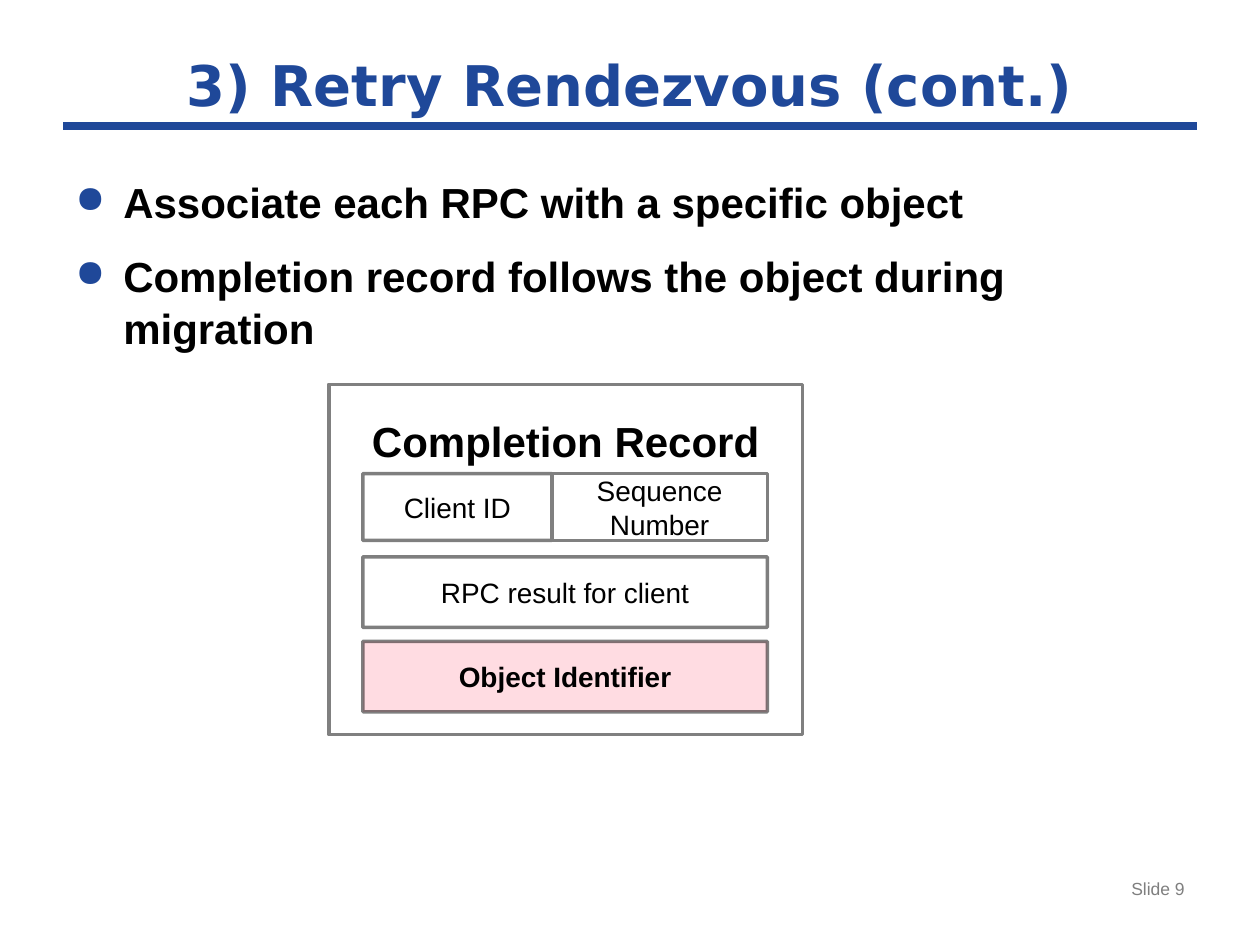
"""Build the "Retry Rendezvous (cont.)" slide with its completion record diagram."""
from dataclasses import dataclass

from lxml import etree
from pptx import Presentation, util as u
from pptx.dml.color import RGBColor
from pptx.enum import shapes, text
from pptx.oxml.ns import qn

PX = 9144
COLORS = {
    "blue": "1F4899",
    "black": "000000",
    "gray": "808080",
    "footer": "7F7F7F",
    "white": "FFFFFF",
    "pink": "FFBAC7",
}
ALIGN = text.PP_ALIGN
ANCHOR = text.MSO_ANCHOR


@dataclass(frozen=True)
class Style:
    size: int
    color: str = "black"
    bold: bool = False
    font: str = "Arial"
    align: ALIGN = ALIGN.CENTER
    anchor: ANCHOR = ANCHOR.MIDDLE
    spacing: float = 1.0


@dataclass(frozen=True)
class Box:
    label: str
    x: int
    y: int
    w: int
    h: int
    style: Style
    fill: str = "white"
    fill_alpha: int = 100
    line: str = "gray"
    line_alpha: int = 100


TITLE = Style(32, "blue", True, "DejaVu Sans")
BODY = Style(24, bold=True, align=ALIGN.LEFT, anchor=ANCHOR.TOP, spacing=1.05)
FOOTER = Style(10, "footer", align=ALIGN.RIGHT, anchor=ANCHOR.TOP)
RECORD = Style(24, bold=True, anchor=ANCHOR.TOP, spacing=1.5)
FIELD = Style(16)
KEY_FIELD = Style(16, bold=True)

BULLETS = [
    "Associate each RPC with a specific object",
    "Completion record follows the object during migration",
]
LEFT, ID_W, SEQ_W = 288, 150, 171
FULL_W = ID_W + SEQ_W
BOXES = [
    Box("Completion Record", 261, 305, 376, 278, RECORD),
    Box("Client ID", LEFT, 376, ID_W, 53, FIELD, line="black", line_alpha=50),
    Box("Sequence Number", LEFT + ID_W, 376, SEQ_W, 53, FIELD),
    Box("RPC result for client", LEFT, 442, FULL_W, 56, FIELD, "white", 50, "black", 50),
    Box("Object Identifier", LEFT, 509, FULL_W, 56, KEY_FIELD, "pink", 50, "black", 50),
]


def px(*values: int) -> list[int]:
    """Turn px lengths into EMU."""
    return [value * PX for value in values]


def rgb(name: str) -> RGBColor:
    """Look up a named colour."""
    return RGBColor.from_string(COLORS[name])


def paint(fill, color: str, alpha: int = 100) -> None:
    """Apply a solid fill, with opacity in percent."""
    fill.solid()
    fill.fore_color.rgb = rgb(color)
    if alpha < 100:
        clr = fill._xPr.find(qn("a:solidFill"))[0]
        etree.SubElement(clr, qn("a:alpha")).set("val", str(alpha * 1000))


def write(tf, lines: list[str], style: Style) -> None:
    """Fill a text frame with one paragraph per line."""
    tf.word_wrap = True
    tf.vertical_anchor = style.anchor
    tf.text = "\n".join(lines)
    for p in tf.paragraphs:
        p.alignment = style.align
        p.line_spacing = style.spacing
        p.font.name = style.font
        p.font.size = u.Pt(style.size)
        p.font.bold = style.bold
        p.font.color.rgb = rgb(style.color)


def add_text(s, lines: list[str], x: int, y: int, w: int, h: int, style: Style):
    """Add a text box and return its text frame."""
    tf = s.shapes.add_textbox(*px(x, y, w, h)).text_frame
    write(tf, lines, style)
    return tf


def add_bullet(p) -> None:
    """Give a paragraph a hanging blue bullet."""
    p.space_before = u.Pt(12)
    pPr = p._p.get_or_add_pPr()
    indent = 38 * PX
    pPr.set("marL", str(indent))
    pPr.set("indent", str(-indent))
    marks = [etree.Element(qn(f"a:{tag}")) for tag in ("buClr", "buSzPct", "buChar")]
    etree.SubElement(marks[0], qn("a:srgbClr")).set("val", COLORS["blue"])
    marks[1].set("val", "90000")
    marks[2].set("char", "●")
    at = pPr.index(pPr.find(qn("a:defRPr")))
    pPr[at:at] = marks


def add_box(s, box: Box) -> None:
    """Draw one labelled rectangle."""
    sp = s.shapes.add_shape(
        shapes.MSO_SHAPE.RECTANGLE, *px(box.x, box.y, box.w, box.h))
    sp.shadow.inherit = False
    paint(sp.fill, box.fill, box.fill_alpha)
    sp.line.width = u.Pt(2)
    paint(sp.line.fill, box.line, box.line_alpha)
    write(sp.text_frame, [box.label], box.style)


def add_rule(s, x1: int, x2: int, y: int) -> None:
    """Draw the horizontal rule under the title."""
    line = s.shapes.add_connector(shapes.MSO_CONNECTOR.STRAIGHT, *px(x1, y, x2, y))
    line.line.width = u.Pt(4.5)
    line.line.color.rgb = rgb("blue")
    etree.SubElement(line._element.spPr, qn("a:effectLst"))


def main() -> None:
    """Build and save the slide."""
    prs = Presentation()
    prs.slide_width, prs.slide_height = px(1000, 750)
    s = prs.slides.add_slide(prs.slide_layouts[6])
    add_rule(s, 50, 950, 100)
    body = add_text(s, BULLETS, 50, 133, 891, 537, BODY)
    for p in body.paragraphs:
        add_bullet(p)
    add_text(s, ["Slide 9"], 717, 692, 233, 43, FOOTER)
    add_text(s, ["3) Retry Rendezvous (cont.)"], 50, 33, 900, 67, TITLE)
    for box in BOXES:
        add_box(s, box)
    prs.save("out.pptx")


if __name__ == "__main__":
    main()
